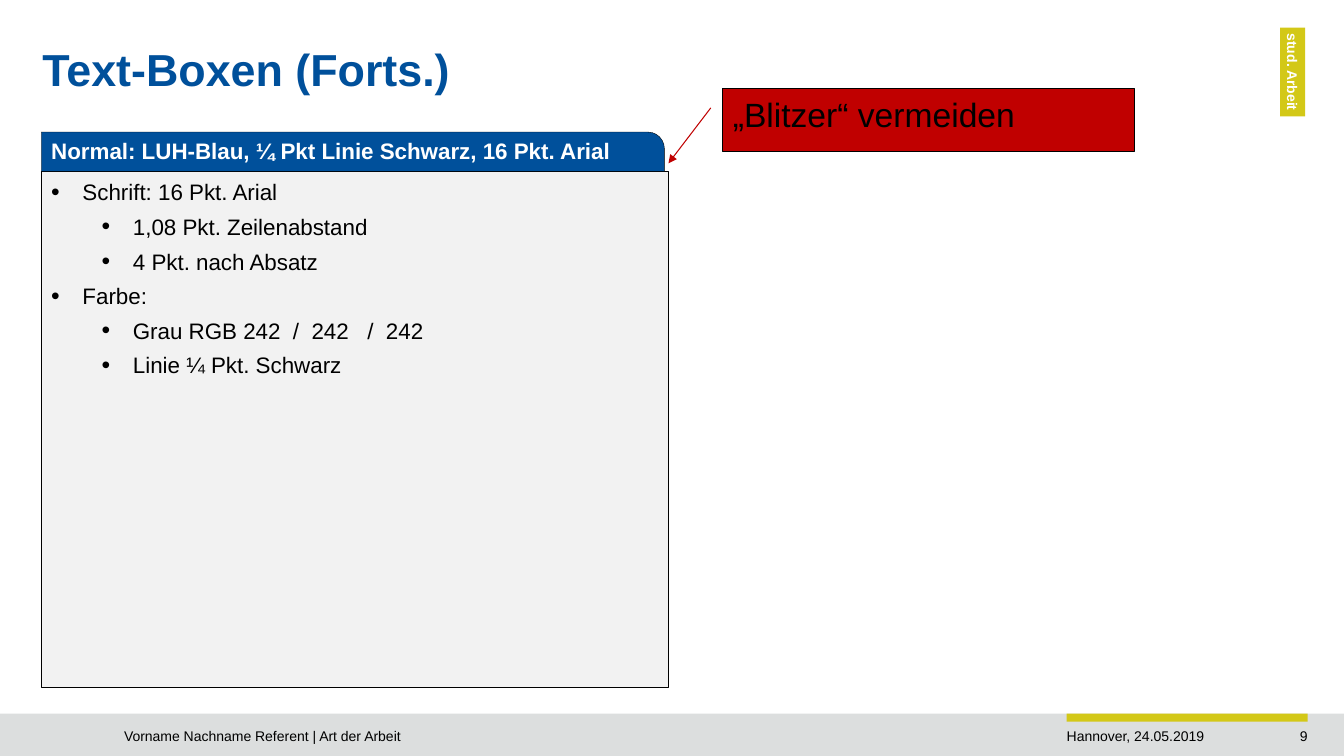
from dataclasses import dataclass
from typing import Optional

from lxml import etree
from pptx import Presentation
from pptx.dml.color import RGBColor
from pptx.enum.shapes import MSO_CONNECTOR, MSO_SHAPE
from pptx.enum.text import MSO_ANCHOR, PP_ALIGN
from pptx.oxml.ns import qn
from pptx.util import Inches, Pt

BLUE = RGBColor(0x00, 0x50, 0x9B)
YELLOW = RGBColor(0xD3, 0xC8, 0x17)
FOOTER_GRAY = RGBColor(0xDC, 0xDE, 0xDE)
BOX_GRAY = RGBColor(0xF2, 0xF2, 0xF2)
RED = RGBColor(0xC0, 0x00, 0x00)
BLACK = RGBColor(0x00, 0x00, 0x00)
WHITE = RGBColor(0xFF, 0xFF, 0xFF)


@dataclass
class Line:
    text: str
    level: Optional[int] = None


@dataclass
class Box:
    left: float
    top: float
    width: float
    height: float
    lines: tuple[Line, ...] = ()
    size: int = 10
    color: RGBColor = BLACK
    bold: bool = False
    align: PP_ALIGN = PP_ALIGN.LEFT
    anchor: MSO_ANCHOR = MSO_ANCHOR.TOP
    margins: tuple[float, float, float, float] = (0.1, 0.05, 0.1, 0.05)
    spacing: float = 1.0
    fill: Optional[RGBColor] = None
    line_width: float = 0
    rotation: float = 0
    kind: MSO_SHAPE = MSO_SHAPE.RECTANGLE
    adjustments: tuple[float, ...] = ()
    flipped: bool = False


BOXES = (
    Box(0, 7.08, 13.33, 0.42, fill=FOOTER_GRAY),
    Box(10.58, 7.08, 2.39, 0.08, fill=YELLOW),
    Box(12.11, 7.17, 0.86, 0.33, (Line("9"),), align=PP_ALIGN.RIGHT,
        margins=(0.1, 0.05, 0, 0.05)),
    Box(1.23, 7.17, 9.05, 0.27, (Line("Vorname Nachname Referent | Art der Arbeit"),),
        margins=(0, 0.05, 0.1, 0.05)),
    Box(10.58, 7.17, 1.91, 0.27, (Line("Hannover, 24.05.2019"),),
        margins=(0, 0.05, 0, 0.05)),
    Box(12.38, 0.59, 0.88, 0.25, (Line("stud. Arbeit"),), color=WHITE, bold=True,
        align=PP_ALIGN.CENTER, margins=(0, 0.04, 0, 0.04), fill=YELLOW, rotation=90),
    Box(0.42, 0.28, 11.6, 0.87, (Line("Text-Boxen (Forts.)"),), 32, BLUE, True,
        anchor=MSO_ANCHOR.MIDDLE, margins=(0, 0, 0, 0), spacing=0.9),
    Box(0.41, 1.7, 6.22, 5.12, (
        Line("Schrift: 16 Pkt. Arial", 0),
        Line("1,08 Pkt. Zeilenabstand", 1),
        Line("4 Pkt. nach Absatz", 1),
        Line("Farbe:", 0),
        Line("Grau RGB 242  /  242   /  242", 1),
        Line("Linie ¼ Pkt. Schwarz", 1),
    ), 16, spacing=1.08, fill=BOX_GRAY, line_width=0.25),
    Box(0.41, 1.31, 6.18, 0.39,
        (Line("Normal: LUH-Blau, ¼ Pkt Linie Schwarz, 16 Pkt. Arial"),), 16, WHITE, True,
        margins=(0.1, 0, 0.1, 0), fill=BLUE, line_width=0.25,
        kind=MSO_SHAPE.SNIP_ROUND_RECTANGLE, adjustments=(0.42, 0), flipped=True),
    Box(7.17, 0.88, 4.08, 0.62, (Line("„Blitzer“ vermeiden"),), 24, fill=RED,
        line_width=0.75),
)


def add_bullet(paragraph, level: int) -> None:
    paragraph.level = level
    paragraph.space_after = Pt(4)
    properties = paragraph._p.get_or_add_pPr()
    properties.set("marL", str(Inches(0.31 + 0.5 * level)))
    properties.set("indent", str(Inches(-0.31)))
    etree.SubElement(properties, qn("a:buSzPct"), val="110000")
    etree.SubElement(properties, qn("a:buFont"), typeface="Arial")
    etree.SubElement(properties, qn("a:buChar"), char="•")


def write_text(shape, box: Box) -> None:
    frame = shape.text_frame
    frame.word_wrap = True
    frame.vertical_anchor = box.anchor
    (frame.margin_left, frame.margin_top,
     frame.margin_right, frame.margin_bottom) = map(Inches, box.margins)
    for index, line in enumerate(box.lines):
        paragraph = frame.add_paragraph() if index else frame.paragraphs[0]
        paragraph.text = line.text
        paragraph.alignment = box.align
        paragraph.line_spacing = box.spacing
        if line.level is not None:
            add_bullet(paragraph, line.level)
        font = paragraph.font
        font.name = "Arial"
        font.size = Pt(box.size)
        font.bold = box.bold
        font.color.rgb = box.color


def add_box(slide, box: Box) -> None:
    area = tuple(map(Inches, (box.left, box.top, box.width, box.height)))
    if box.fill is None:
        shape = slide.shapes.add_textbox(*area)
    else:
        shape = slide.shapes.add_shape(box.kind, *area)
        shape.shadow.inherit = False
        shape.fill.solid()
        shape.fill.fore_color.rgb = box.fill
        if box.line_width:
            shape.line.color.rgb = BLACK
            shape.line.width = Pt(box.line_width)
        else:
            shape.line.fill.background()
        for index, value in enumerate(box.adjustments):
            shape.adjustments[index] = value
        if box.flipped:
            shape.element.spPr.find(qn("a:xfrm")).set("flipH", "1")
        shape.rotation = box.rotation
    if box.lines:
        write_text(shape, box)


def add_arrow(slide, start: tuple[float, float], end: tuple[float, float]) -> None:
    arrow = slide.shapes.add_connector(
        MSO_CONNECTOR.STRAIGHT, *map(Inches, start + end))
    arrow.line.color.rgb = RED
    arrow.line.width = Pt(0.75)
    etree.SubElement(arrow.line._get_or_add_ln(), qn("a:tailEnd"), type="triangle")
    etree.SubElement(arrow.element.spPr, qn("a:effectLst"))


def main() -> None:
    presentation = Presentation()
    presentation.slide_width = Inches(13.33)
    presentation.slide_height = Inches(7.5)
    slide = presentation.slides.add_slide(presentation.slide_layouts[6])
    for box in BOXES:
        add_box(slide, box)
    add_arrow(slide, (7.05, 1.07), (6.63, 1.62))
    presentation.save("out.pptx")


if __name__ == "__main__":
    main()
